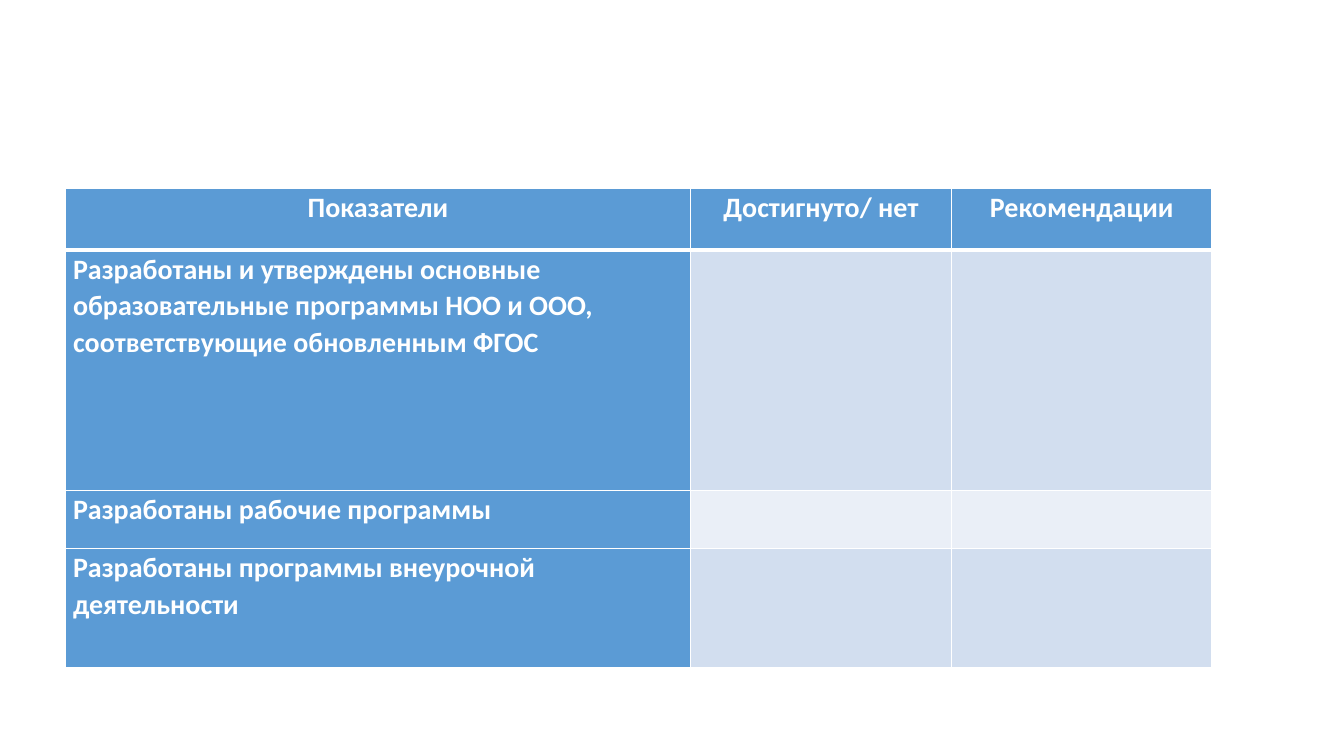
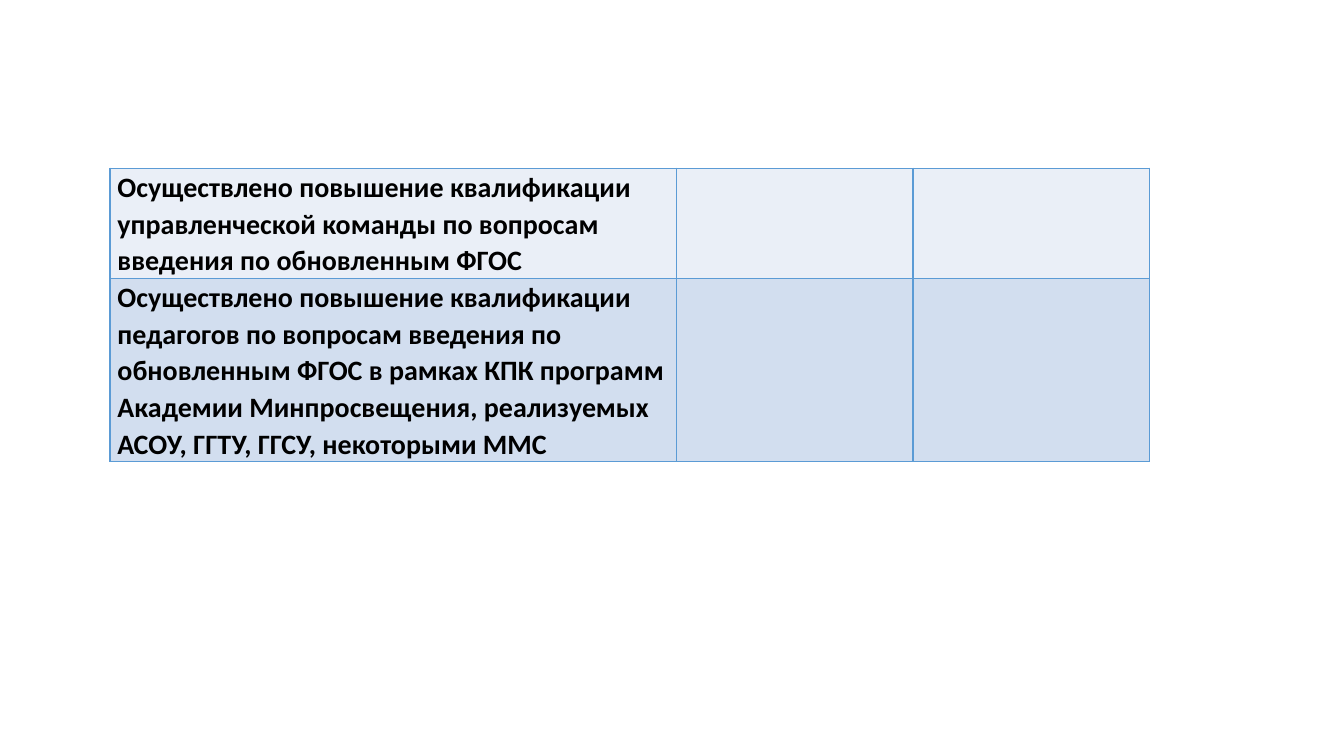
from lxml.etree import SubElement
from pptx import Presentation
from pptx.dml.color import RGBColor
from pptx.enum.text import PP_ALIGN
from pptx.oxml.ns import qn
from pptx.util import Cm, Pt

WHITE = RGBColor(0xFF, 0xFF, 0xFF)
BLACK = RGBColor(0x00, 0x00, 0x00)
BLUE = RGBColor(0x5B, 0x9B, 0xD5)
BAND_DARK = RGBColor(0xD2, 0xDE, 0xEF)
BAND_LIGHT = RGBColor(0xEA, 0xEF, 0xF7)

THIN, THICK = Pt(1), Pt(3)
FONT_FORMAT = {"name": "Calibri", "size": Pt(20), "bold": True}
PARAGRAPH_FORMAT = {"line_spacing": 1.07, "space_after": Pt(8)}
CELL_FORMAT = {"margin_left": Cm(0.19), "margin_right": Cm(0.19),
               "margin_top": 0, "margin_bottom": 0}

HEADER = ["Показатели", "Достигнуто/ нет", "Рекомендации"]
PROGRAMMES = [
    "Разработаны и утверждены основные образовательные программы НОО и ООО, "
    "соответствующие обновленным ФГОС",
    "Разработаны рабочие программы",
    "Разработаны программы внеурочной деятельности",
]
TRAINING = [
    "Осуществлено повышение квалификации управленческой команды по вопросам "
    "введения по обновленным ФГОС",
    "Осуществлено повышение квалификации педагогов по вопросам введения по "
    "обновленным ФГОС в рамках КПК программ Академии Минпросвещения, "
    "реализуемых АСОУ, ГГТУ, ГГСУ, некоторыми ММС",
]


def apply_format(target, values):
    """Set every attribute named in the format values."""
    for name, value in values.items():
        setattr(target, name, value)


def set_borders(cell, color, top=THIN, bottom=THIN):
    """Draw solid lines on the four sides of a cell."""
    properties = cell._tc.get_or_add_tcPr()
    sides = {"a:lnL": THIN, "a:lnR": THIN, "a:lnT": top, "a:lnB": bottom}
    for tag, width in sides.items():
        line = SubElement(properties, qn(tag), w=str(width))
        fill = SubElement(line, qn("a:solidFill"))
        SubElement(fill, qn("a:srgbClr"), val=str(color))


def fill_cell(cell, color):
    """Give a cell its margins and solid fill."""
    apply_format(cell, CELL_FORMAT)
    cell.fill.solid()
    cell.fill.fore_color.rgb = color


def write_cell(cell, text, color, alignment=PP_ALIGN.LEFT):
    """Write one formatted paragraph into a cell."""
    paragraph = cell.text_frame.paragraphs[0]
    apply_format(paragraph, {**PARAGRAPH_FORMAT, "alignment": alignment})
    run = paragraph.add_run()
    run.text = text
    apply_format(run.font, FONT_FORMAT)
    run.font.color.rgb = color


def add_grid(slide, left, top, widths, heights):
    """Add a plain table with the given column widths and row heights."""
    table = slide.shapes.add_table(
        len(heights), len(widths), Cm(left), Cm(top),
        Cm(sum(widths)), Cm(sum(heights))).table
    apply_format(table, {"first_row": False, "horz_banding": False})
    for column, width in zip(table.columns, widths):
        column.width = Cm(width)
    for row, height in zip(table.rows, heights):
        row.height = Cm(height)
    return table


def add_programmes_slide(presentation):
    """Build the table with a header row and a blue first column."""
    slide = presentation.slides.add_slide(presentation.slide_layouts[6])
    table = add_grid(slide, 1.65, 4.75, [15.75, 6.58, 6.56], [1.55, 6.05, 1.47, 3])
    rows = [HEADER] + [[text, "", ""] for text in PROGRAMMES]
    for row_index, row in enumerate(rows):
        is_header = row_index == 0
        band = BAND_DARK if row_index % 2 else BAND_LIGHT
        alignment = PP_ALIGN.CENTER if is_header else PP_ALIGN.LEFT
        for column_index, text in enumerate(row):
            cell = table.cell(row_index, column_index)
            set_borders(cell, WHITE,
                        top=THICK if row_index == 1 else THIN,
                        bottom=THICK if is_header else THIN)
            fill_cell(cell, BLUE if is_header or column_index == 0 else band)
            if text:
                write_cell(cell, text, WHITE, alignment)


def add_training_slide(presentation):
    """Build the banded table with blue borders."""
    slide = presentation.slides.add_slide(presentation.slide_layouts[6])
    table = add_grid(slide, 2.77, 4.24, [14.27, 5.97, 5.95], [2.72, 4.54])
    for row, text, band in zip(table.rows, TRAINING, (BAND_LIGHT, BAND_DARK)):
        for cell in row.cells:
            set_borders(cell, BLUE)
            fill_cell(cell, band)
        write_cell(row.cells[0], text, BLACK)


def main():
    """Build and save the presentation."""
    presentation = Presentation()
    apply_format(presentation, {"slide_width": Cm(33.87), "slide_height": Cm(19.05)})
    add_programmes_slide(presentation)
    add_training_slide(presentation)
    presentation.save("out.pptx")


if __name__ == "__main__":
    main()
